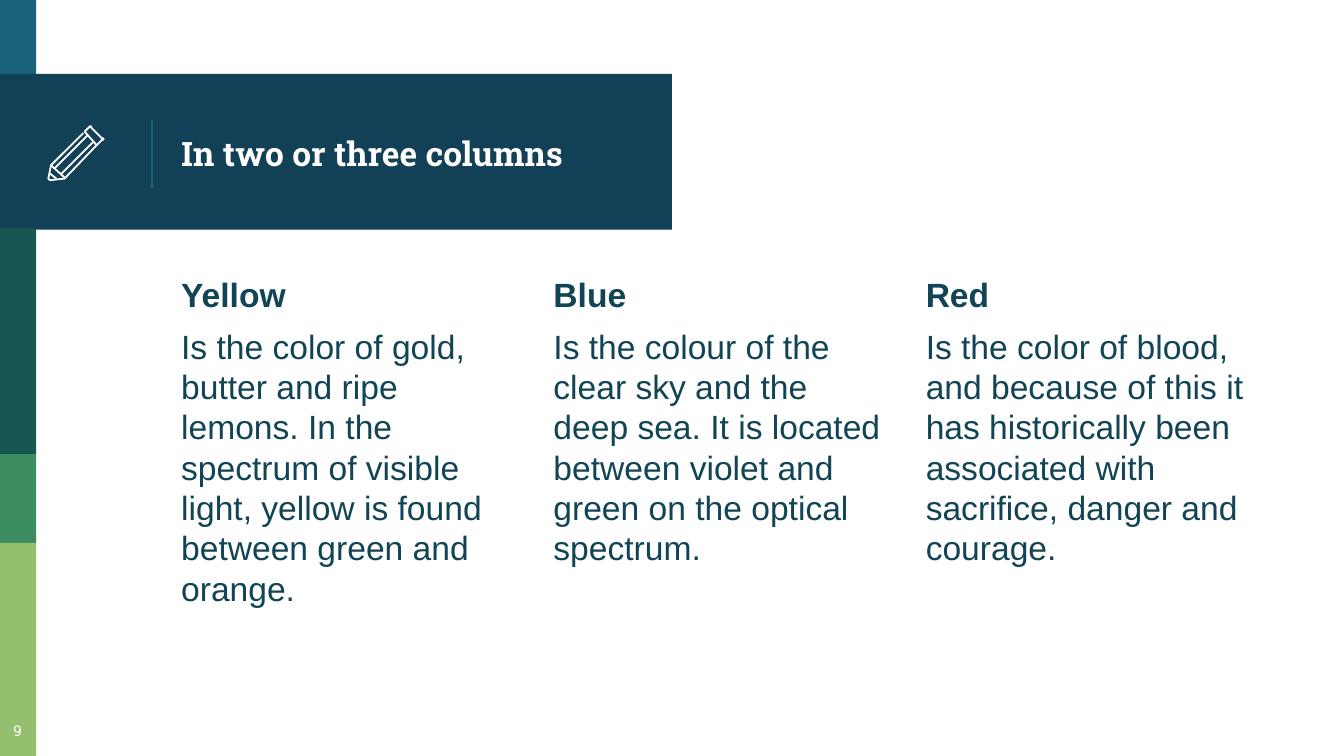
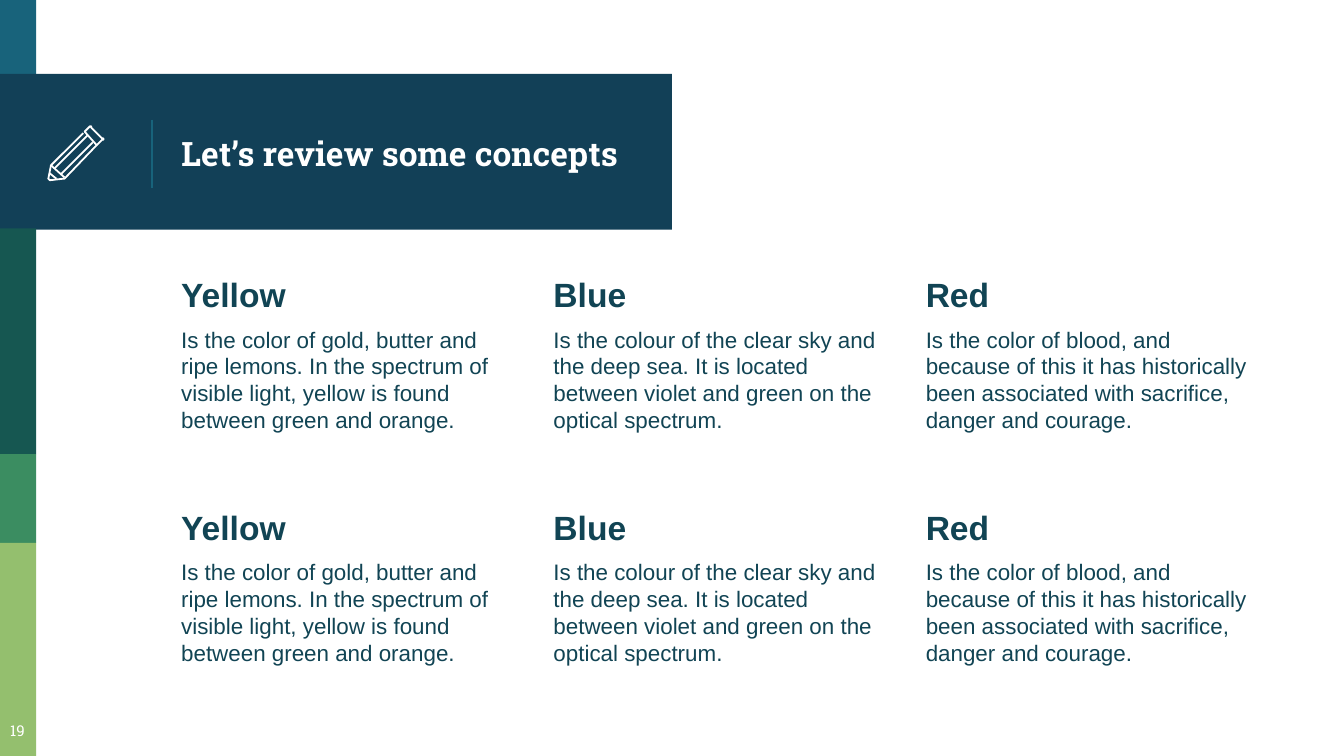
from lxml.etree import SubElement
from pptx import Presentation
from pptx.dml.color import RGBColor
from pptx.enum.shapes import MSO_CONNECTOR, MSO_SHAPE
from pptx.enum.text import MSO_ANCHOR, MSO_AUTO_SIZE, PP_ALIGN
from pptx.oxml.ns import qn
from pptx.util import Inches, Pt

COLORS = {
    "white": "FFFFFF",
    "teal": "18637B",
    "navy": "124057",
    "pine": "165751",
    "green": "3B8D61",
    "lime": "94BF6E",
    "ink": "114454",
}
TITLE_FONT = "Roboto Slab"
BODY_FONT = "Arial"
SIDE_WIDTH = 0.27
BANDS = [
    ("teal", 0, 0.58, SIDE_WIDTH),
    ("navy", 0.55, 1.16, 5),
    ("pine", 1.7, 1.68, SIDE_WIDTH),
    ("green", 3.38, 0.66, SIDE_WIDTH),
    ("lime", 4.04, 1.59, SIDE_WIDTH),
]
PENCIL_STROKES = [
    ([(40, 9), (32, 1), (32, 0), (31, 0), (30, 1), (27, 4),
      (36, 14), (40, 10), (41, 10), (41, 9)], True),
    ([(33, 12), (9, 36)], False),
    ([(26, 5), (2, 29), (0, 39), (1, 40), (2, 40), (11, 39), (12, 39), (36, 14)], False),
    ([(5, 31), (29, 7)], False),
    ([(6, 39), (1, 35)], False),
    ([(2, 29), (12, 38)], False),
]
CONCEPTS = [
    ("Yellow", "Is the color of gold, butter and ripe lemons. In the spectrum of "
               "visible light, yellow is found between green and orange."),
    ("Blue", "Is the colour of the clear sky and the deep sea. It is located "
             "between violet and green on the optical spectrum."),
    ("Red", "Is the color of blood, and because of this it has historically been "
            "associated with sacrifice, danger and courage."),
]
COLUMN_WIDTH = 2.64
COLUMN_STEP = 2.77


def rgb(name):
    return RGBColor.from_string(COLORS[name])


def style_font(font, name, size, color, bold=False):
    font.name = name
    font.size = Pt(size)
    font.bold = bold
    font.color.rgb = rgb(color)


def set_frame(frame, anchor=MSO_ANCHOR.TOP):
    frame.word_wrap = True
    frame.auto_size = MSO_AUTO_SIZE.NONE
    frame.vertical_anchor = anchor
    frame.margin_left = frame.margin_right = Inches(0.1)
    frame.margin_top = frame.margin_bottom = Inches(0.1)


def add_text_box(page, left, top, width, height):
    box = page.shapes.add_textbox(Inches(left), Inches(top), Inches(width), Inches(height))
    set_frame(box.text_frame)
    return box.text_frame


def add_bands(page):
    for color, top, height, width in BANDS:
        band = page.shapes.add_shape(
            MSO_SHAPE.RECTANGLE, 0, Inches(top), Inches(width), Inches(height))
        band.shadow.inherit = False
        band.fill.solid()
        band.fill.fore_color.rgb = rgb(color)
        band.line.fill.background()


def add_divider(page, left, top, height):
    divider = page.shapes.add_connector(
        MSO_CONNECTOR.STRAIGHT, Inches(left), Inches(top), Inches(left), Inches(top + height))
    divider.line.color.rgb = rgb("teal")
    divider.line.width = Pt(0.75)
    SubElement(divider.element.spPr, qn("a:effectLst"))


def set_title(page, text, left, top, width, height):
    title = page.shapes.title
    title.left, title.top = Inches(left), Inches(top)
    title.width, title.height = Inches(width), Inches(height)
    set_frame(title.text_frame, MSO_ANCHOR.MIDDLE)
    title.text_frame.text = text
    para = title.text_frame.paragraphs[0]
    para.alignment = PP_ALIGN.LEFT
    style_font(para.font, TITLE_FONT, 18, "white", True)
    title.element.getparent().append(title.element)


def add_pencil(page, left, top):
    pencil = page.shapes.add_group_shape()
    for points, closed in PENCIL_STROKES:
        builder = pencil.shapes.build_freeform(*points[0], scale=Inches(0.01))
        builder.add_line_segments(points[1:], close=closed)
        stroke = builder.convert_to_shape(Inches(left), Inches(top))
        stroke.shadow.inherit = False
        stroke.fill.background()
        stroke.line.color.rgb = rgb("white")
        stroke.line.width = Pt(0.96)


def add_page_number(page, number):
    frame = add_text_box(page, -0.06, 5.27, 0.38, 0.35)
    para = frame.paragraphs[0]
    para.text = str(number)
    para.alignment = PP_ALIGN.CENTER
    style_font(para.font, TITLE_FONT, 8, "white")


def add_concept(page, heading, body, body_size, left, top, height):
    frame = add_text_box(page, left, top, COLUMN_WIDTH, height)
    lines = [(heading, 18, True), (body, body_size, False)]
    for index, (text, size, bold) in enumerate(lines):
        para = frame.add_paragraph() if index else frame.paragraphs[0]
        para.text = text
        para.space_before = Pt(6)
        style_font(para.font, BODY_FONT, size, "ink", bold)


def add_concept_row(page, body_size, left, top, height):
    for column, (heading, body) in enumerate(CONCEPTS):
        add_concept(page, heading, body, body_size,
                    left + column * COLUMN_STEP, top, height)


def add_concept_slide(deck, title, number, body_size, row_tops, row_height):
    page = deck.slides.add_slide(deck.slide_layouts[5])
    add_bands(page)
    add_divider(page, 1.13, 0.89, 0.51)
    set_title(page, title, 1.25, 0.58, 3.51, 1.12)
    for top in row_tops:
        add_concept_row(page, body_size, 1.25, top, row_height)
    add_pencil(page, 0.36, 0.94)
    add_page_number(page, number)


def main():
    deck = Presentation()
    deck.slide_width = Inches(10)
    deck.slide_height = Inches(10 * 9 / 16)
    add_concept_slide(deck, "In two or three columns", 9, 18, [1.94], 3.45)
    add_concept_slide(deck, "Let’s review some concepts", 19, 12, [1.94, 3.67], 1.43)
    deck.save("out.pptx")


if __name__ == "__main__":
    main()
